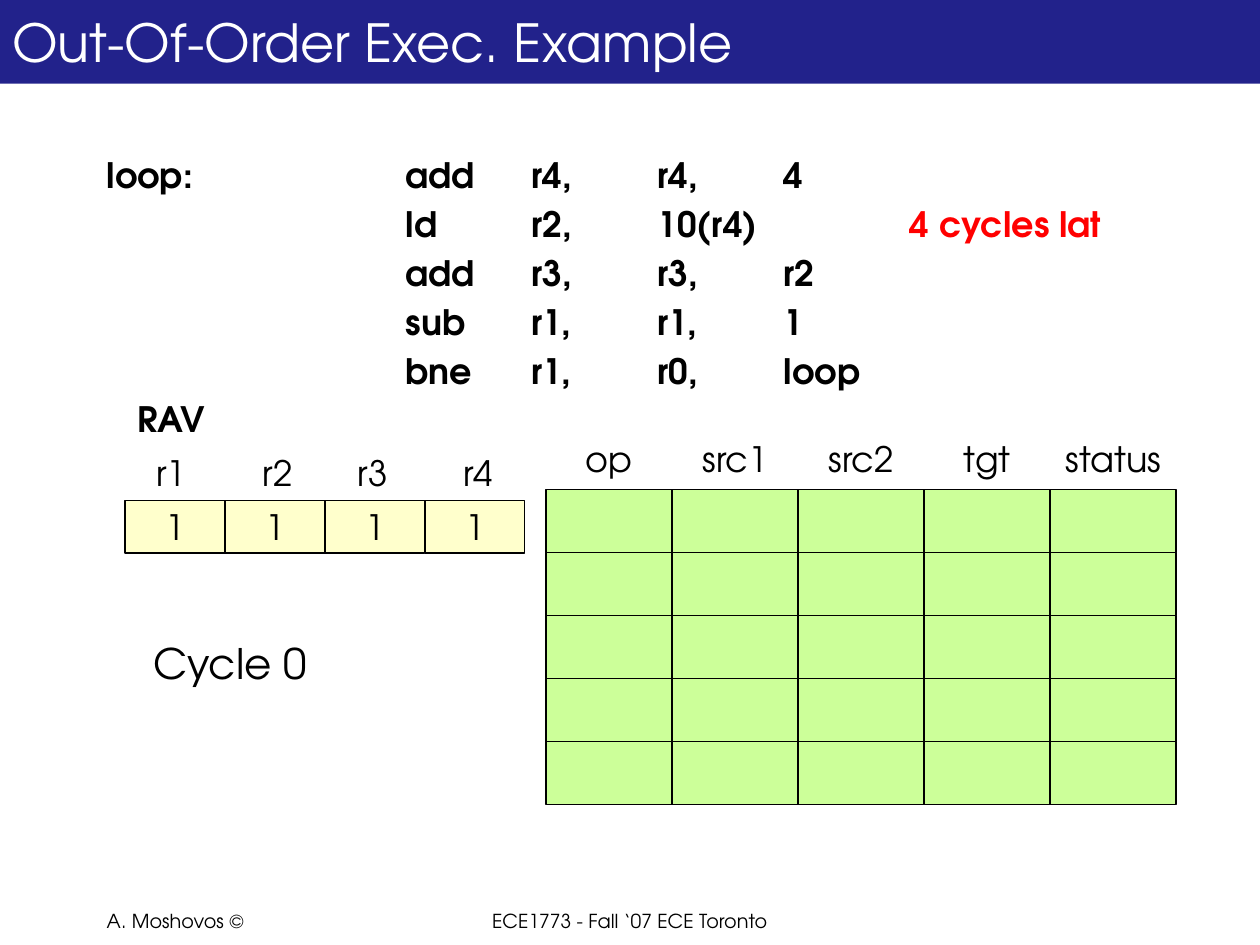
from pptx import Presentation
from pptx.dml.color import RGBColor
from pptx.enum.shapes import MSO_SHAPE
from pptx.enum.text import MSO_ANCHOR, PP_ALIGN
from pptx.util import Cm, Pt

FONT = "TeX Gyre Adventor"
COLORS = {
    "navy": "22228B",
    "white": "FFFFFF",
    "black": "000000",
    "red": "FF0000",
    "cream": "FFFFCC",
    "green": "CCFF99",
}
CODE = [
    ["loop:", "", "add", "r4,", "r4,", "4"],
    ["", "", "", "ld", "r2,", "10(r4)", "", "4 cycles lat"],
    ["", "", "", "add", "r3,", "r3,", "r2"],
    ["", "", "", "sub", "r1,", "r1,", "1"],
    ["", "", "", "bne", "r1,", "r0,", "loop"],
]
REGISTERS = [("r1", "1", 0.38), ("r2", "1", 2.53), ("r3", "1", 4.44), ("r4", "1", 6.57)]
COLUMNS = ["op", "src1", "src2", "tgt", "status"]
STATION_ROWS = 5


def rgb(name):
    """Return the named colour."""
    return RGBColor.from_string(COLORS[name])


def style(r, size, color="black", bold=False):
    """Format one run."""
    r.font.name = FONT
    r.font.size = Pt(size)
    r.font.bold = bold
    r.font.color.rgb = rgb(color)


def write(sp, text, size, color="black", bold=False, align=PP_ALIGN.LEFT,
          anchor=MSO_ANCHOR.TOP, wrap=False):
    """Put one styled paragraph in a shape."""
    tf = sp.text_frame
    tf.word_wrap = wrap
    tf.vertical_anchor = anchor
    p = tf.paragraphs[0]
    p.text = text
    p.alignment = align
    for r in p.runs:
        style(r, size, color, bold)


def add_label(s, x, y, w, h, text, size=20, **options):
    """Add a text box with one line."""
    write(s.shapes.add_textbox(Cm(x), Cm(y), Cm(w), Cm(h)), text, size, **options)


def add_box(shapes, x, y, w, h, fill, outline=True):
    """Add a flat filled rectangle."""
    sp = shapes.add_shape(MSO_SHAPE.RECTANGLE, Cm(x), Cm(y), Cm(w), Cm(h))
    sp.shadow.inherit = False
    sp.fill.solid()
    sp.fill.fore_color.rgb = rgb(fill)
    if outline:
        sp.line.color.rgb = rgb("black")
        sp.line.width = Pt(0.75)
    else:
        sp.line.fill.background()
    return sp


def add_title(s, x, y, w, h):
    """Add the title band."""
    sp = add_box(s.shapes, x, y, w, h, "navy", outline=False)
    write(sp, "Out-Of-Order Exec. Example", 30, "white", anchor=MSO_ANCHOR.MIDDLE, wrap=True)


def add_code(s, x, y, w, h):
    """Add the assembly listing with its latency remark."""
    tf = s.shapes.add_textbox(Cm(x), Cm(y), Cm(w), Cm(h)).text_frame
    tf.word_wrap = True
    for i, fields in enumerate(CODE):
        p = tf.add_paragraph() if i else tf.paragraphs[0]
        p.space_before = Pt(4)
        pPr = p._p.get_or_add_pPr()
        pPr.set("marL", str(Cm(0.95)))
        pPr.set("indent", str(-Cm(0.95)))
        pPr.set("defTabSz", str(Cm(2.54)))
        remark = fields[7:]
        r = p.add_run()
        r.text = "\t".join(fields[:7] + [""] * len(remark))
        style(r, 20, bold=True)
        for text in remark:
            r = p.add_run()
            r.text = text
            style(r, 20, "red", bold=True)


def add_registers(s, x, y, w, h):
    """Add the register availability vector."""
    cell_w, cell_h = w / len(REGISTERS), 1.06
    group = s.shapes.add_group_shape()
    for i, (name, value, dx) in enumerate(REGISTERS):
        sp = add_box(group.shapes, x + i * cell_w, y + h - cell_h, cell_w, cell_h, "cream")
        write(sp, value, 20, align=PP_ALIGN.CENTER, anchor=MSO_ANCHOR.MIDDLE)
        add_label(s, x + dx, y + 1.1, 1.12, 1.09, name)
    add_label(s, x, y, 1.93, 1.09, "RAV", bold=True)


def add_station(s, x, y, w, h):
    """Add the empty instruction window below its column headings."""
    cell_w, cell_h = w / len(COLUMNS), h / (STATION_ROWS + 1)
    for i, name in enumerate(COLUMNS):
        add_label(s, x + i * cell_w, y, cell_w, cell_h, name,
                  align=PP_ALIGN.CENTER, anchor=MSO_ANCHOR.MIDDLE)
    for row in range(1, STATION_ROWS + 1):
        group = s.shapes.add_group_shape()
        for i in range(len(COLUMNS)):
            add_box(group.shapes, x + i * cell_w, y + row * cell_h, cell_w, cell_h, "green")


def add_footer(s, x, y, w, h):
    """Add the author and the course."""
    add_label(s, x, y, 5.28, h, "A. Moshovos ©", 11, wrap=True)
    course_w = 8.89
    add_label(s, x + (w - course_w) / 2, y, course_w, h, "ECE1773 - Fall ‘07 ECE Toronto",
              11, align=PP_ALIGN.CENTER, wrap=True)


def main():
    """Build and save the slide."""
    prs = Presentation()
    prs.slide_width, prs.slide_height = Cm(25.4), Cm(19.05)
    s = prs.slides.add_slide(prs.slide_layouts[6])
    add_footer(s, 1.9, 18.2, 21.6, 1.06)
    add_title(s, 0, 0, 25.4, 1.69)
    add_code(s, 1.9, 2.96, 21.6, 4.32)
    add_registers(s, 2.52, 7.88, 8.06, 3.27)
    add_label(s, 2.84, 12.73, 3.63, 1.27, "Cycle 0", 24)
    add_station(s, 11.01, 8.6, 12.7, 7.62)
    prs.save("out.pptx")


if __name__ == "__main__":
    main()
